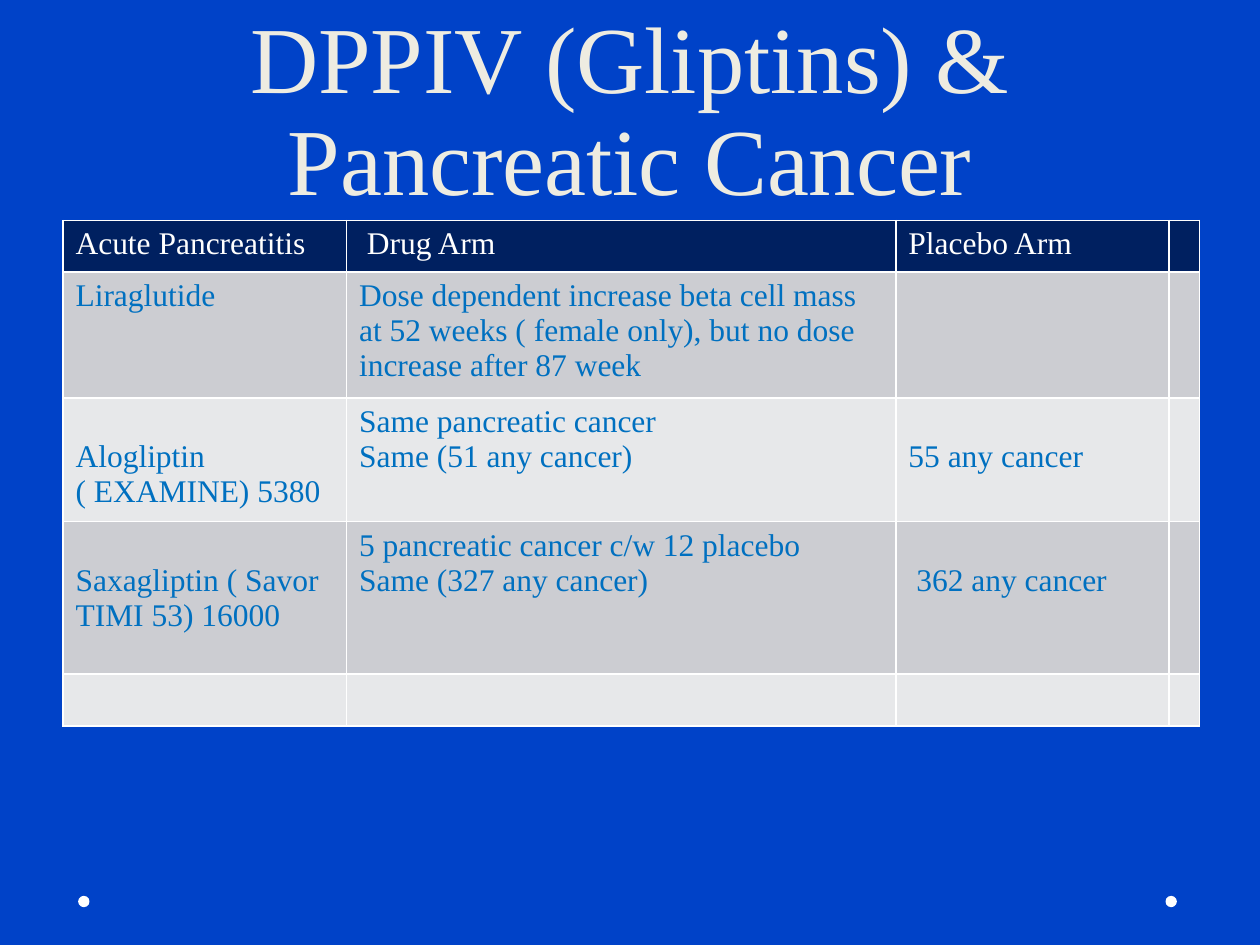
from lxml import etree
from pptx import Presentation
from pptx.dml.color import RGBColor
from pptx.enum.shapes import MSO_SHAPE
from pptx.enum.text import MSO_ANCHOR, PP_ALIGN
from pptx.oxml import parse_xml
from pptx.util import Inches, Pt

OVAL = MSO_SHAPE.OVAL
BOTTOM = MSO_ANCHOR.BOTTOM
CENTER = PP_ALIGN.CENTER
FONT = "Times New Roman"
NAMESPACE = "http://schemas.openxmlformats.org/drawingml/2006/main"
WHITE, NAVY, BLUE = "FFFFFF", "002060", "0070C0"
DARK_BAND, LIGHT_BAND = "CCCDD2", "E7E8EA"


def paint(fill, color):
    fill.solid()
    fill.fore_color.rgb = RGBColor.from_string(color)


def write(frame, text, size=18, color=BLUE, align=None, spacing=None):
    """Fill a text frame, one paragraph for each line of text."""
    frame.word_wrap = True
    for index, line in enumerate(text.split("\n")):
        para = frame.add_paragraph() if index else frame.paragraphs[0]
        para.alignment = align
        para.line_spacing = spacing
        para.font.size = Pt(size)
        if line:
            span = para.add_run()
            span.text = line
            span.font.name = FONT
            span.font.size = Pt(size)
            span.font.color.rgb = RGBColor.from_string(color)


deck = Presentation()
deck.slide_width, deck.slide_height = Inches(10), Inches(7.5)
page = deck.slides.add_slide(deck.slide_layouts[6])
paint(page.background.fill, "0042C8")

# Corner dots
for left in (9.25, 0.62):
    dot = page.shapes.add_shape(OVAL, Inches(left), Inches(7.11), Inches(0.09), Inches(0.09))
    dot.shadow.inherit = False
    paint(dot.fill, WHITE)
    dot.line.fill.background()

# Title
title = page.shapes.add_textbox(Inches(0.5), 0, Inches(9), Inches(1.75))
title.text_frame.vertical_anchor = BOTTOM
write(title.text_frame, "DPPIV (Gliptins) & Pancreatic Cancer", size=54,
      color="EEECE1", align=CENTER, spacing=Pt(58))

# Trial table
column_widths = [2.25, 4.36, 2.17, 0.23]
row_heights = [0.41, 0.93, 0.93, 1.21, 0.41]
rows = [
    ["Acute Pancreatitis", " Drug Arm", "Placebo Arm", ""],
    ["Liraglutide",
     "Dose dependent increase beta cell mass at 52 weeks ( female only), "
     "but no dose increase after 87 week", "", ""],
    ["Alogliptin ( EXAMINE) 5380",
     "Same pancreatic cancer\nSame (51 any cancer)", "55 any cancer", ""],
    ["Saxagliptin ( Savor TIMI 53) 16000",
     "5 pancreatic cancer c/w 12 placebo\nSame (327 any cancer)", " 362 any cancer", ""],
    ["", "", "", ""],
]
lowered_cells = {(2, 0), (2, 2), (3, 0), (3, 2)}  # text starts one line down

table = page.shapes.add_table(len(rows), len(column_widths), Inches(0.5), Inches(1.75),
                              Inches(sum(column_widths)), Inches(sum(row_heights))).table
for column, width in zip(table.columns, column_widths):
    column.width = Inches(width)
for row, height in zip(table.rows, row_heights):
    row.height = Inches(height)

border = parse_xml(
    f'<a:ln xmlns:a="{NAMESPACE}" w="12700"><a:solidFill>'
    f'<a:srgbClr val="{WHITE}"/></a:solidFill></a:ln>')
for row_index, texts in enumerate(rows):
    band = DARK_BAND if row_index % 2 else LIGHT_BAND
    for column_index, text in enumerate(texts):
        cell = table.cell(row_index, column_index)
        properties = cell._tc.get_or_add_tcPr()
        for side in ("lnL", "lnR", "lnT", "lnB"):
            edge = etree.SubElement(properties, f"{{{NAMESPACE}}}{side}", w=border.get("w"))
            edge.append(parse_xml(etree.tostring(border[0])))
        paint(cell.fill, band if row_index else NAVY)
        if (row_index, column_index) in lowered_cells:
            cell.margin_top = Inches(0.33)
        write(cell.text_frame, text, color=BLUE if row_index else WHITE)

deck.save("out.pptx")
